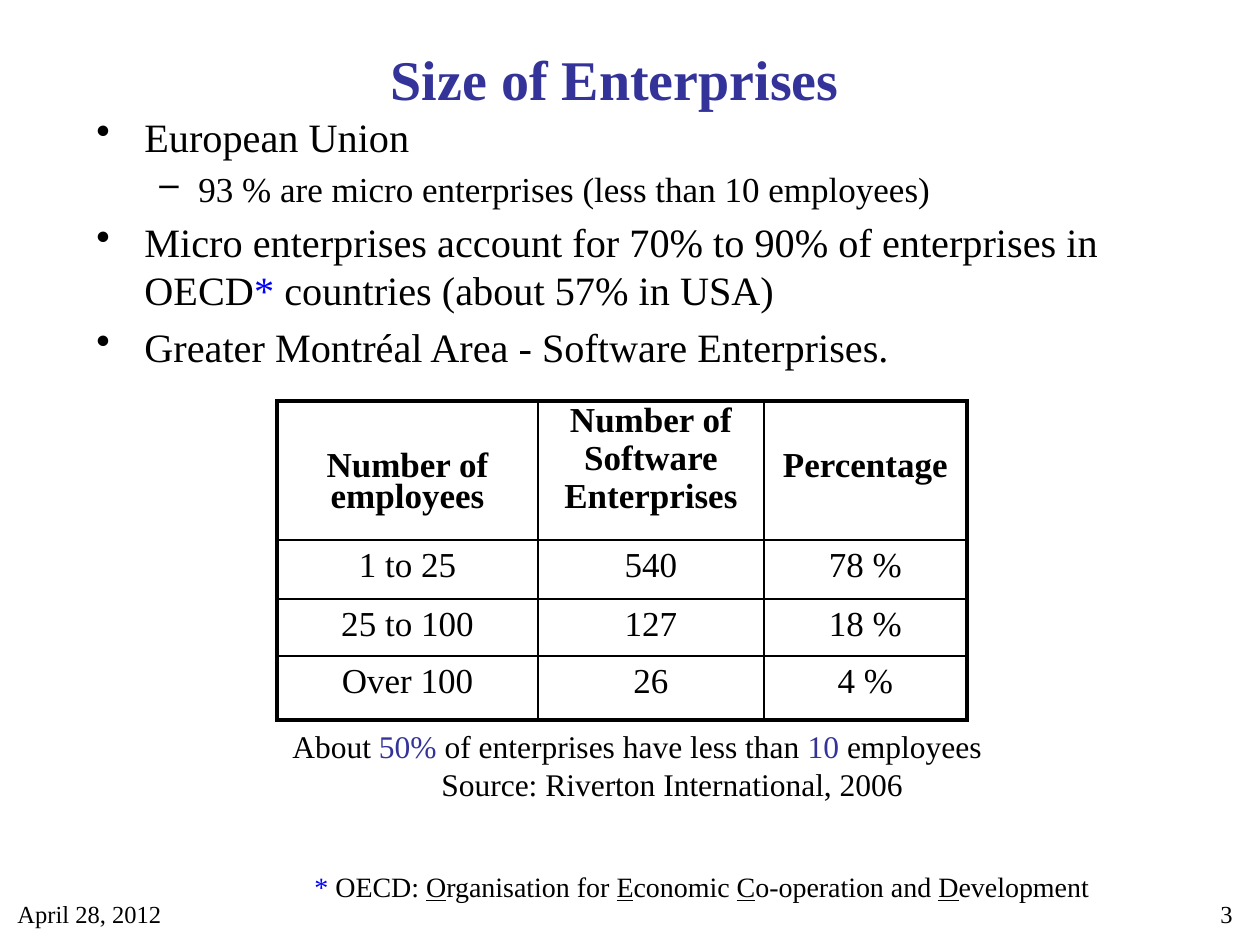
from lxml import etree
from pptx import Presentation
from pptx import util as u
from pptx.dml.color import RGBColor
from pptx.enum import text
from pptx.oxml.ns import qn

FONT = "Times New Roman"
COLORS = {"black": "000000", "indigo": "333399", "blue": "0000FF"}
PX = 914400 / 126  # EMU per pixel


def px(*lengths):
    return [round(length * PX) for length in lengths]


def add_runs(paragraph, runs, size, bold=False):
    """Add (text, colour, underline) runs; colour and underline may be left out."""
    for words, color, underline in ((*run, "black", False)[:3] if len(run) == 1
                                    else (*run, False)[:3] for run in runs):
        run = paragraph.add_run()
        run.text = words
        run.font.name = FONT
        run.font.size = u.Pt(size)
        run.font.bold = bold
        run.font.underline = underline
        run.font.color.rgb = RGBColor.from_string(COLORS[color])


presentation = Presentation()
presentation.slide_width, presentation.slide_height = u.Inches(10), u.Inches(7.5)
slide = presentation.slides.add_slide(presentation.slide_layouts[5])

# Title
title = slide.shapes.title
title.left, title.top, title.width, title.height = px(242, 26, 746, 105)
title.text_frame.vertical_anchor = text.MSO_ANCHOR.MIDDLE
title_paragraph = title.text_frame.paragraphs[0]
title_paragraph.alignment = text.PP_ALIGN.CENTER
add_runs(title_paragraph, [("Size of Enterprises", "indigo")], 32, bold=True)

# Text boxes: box, wrap, then paragraphs as (size, left indent, hanging, bullet, runs)
bullet_level = (23, 48, 48, "•")
dash_level = (20, 102, 39, "–")
text_boxes = [
    ((84, 106, 1091, 318), True, [
        (*bullet_level, [("European Union",)]),
        (*dash_level, [("93 % are micro enterprises (less than 10 employees)",)]),
        (*bullet_level, [
            ("Micro enterprises account for 70% to 90% of enterprises in OECD",),
            ("*", "blue"), (" countries (about 57% in USA)",)]),
        (*bullet_level, [("Greater Montréal Area - Software Enterprises.",)]),
    ]),
    ((280, 721, 722, 89), False, [
        (18, 0, 0, None, [
            ("About",), (" 50%", "indigo"), (" of enterprises have less than ",),
            ("10 ", "indigo"), ("employees",)]),
        (18, 149, 0, None, [("Source: Riverton International, 2006",)]),
    ]),
    ((302, 863, 886, 47), True, [
        (16, 0, 0, None, [
            ("*", "blue"), (" OECD: ",),
            ("O", "black", True), ("rganisation for ",),
            ("E", "black", True), ("conomic ",),
            ("C", "black", True), ("o-operation and ",),
            ("D", "black", True), ("evelopment",)]),
    ]),
    ((5, 893, 294, 66), True, [(14, 0, 0, None, [("April 28, 2012",)])]),
    ((951, 893, 294, 66), True, [(14, 0, 0, None, [("3",)])]),
]
for box, wrap, paragraphs in text_boxes:
    shape = slide.shapes.add_textbox(*px(*box))
    frame = shape.text_frame
    frame.word_wrap = wrap
    for index, (size, indent, hanging, bullet, runs) in enumerate(paragraphs):
        paragraph = frame.paragraphs[0] if index == 0 else frame.add_paragraph()
        add_runs(paragraph, runs, size)
        properties = paragraph._p.get_or_add_pPr()
        properties.set("marL", str(px(indent)[0]))
        properties.set("indent", str(px(-hanging)[0]))
        if bullet:
            paragraph.space_before = u.Pt(size * 0.2)
            etree.SubElement(properties, qn("a:buChar"), char=bullet)

# The page number, added last, sits at the right
paragraph.alignment = text.PP_ALIGN.RIGHT

# Table of software enterprises by size
rows = [
    ["Number of employees", "Number of\nSoftware\nEnterprises", "Percentage"],
    ["1 to 25", "540", "78 %"],
    ["25 to 100", "127", "18 %"],
    ["Over 100", "26", "4 %"],
]
column_widths, row_heights = px(261, 226, 203), px(139, 59, 57, 64)
table = slide.shapes.add_table(
    len(rows), len(column_widths), *px(277, 401),
    sum(column_widths), sum(row_heights)).table
table.first_row = table.horz_banding = False
for column, width in zip(table.columns, column_widths):
    column.width = width
for row, height in zip(table.rows, row_heights):
    row.height = height

last_row, last_column = len(rows) - 1, len(column_widths) - 1
for row_index, row in enumerate(rows):
    is_header = row_index == 0
    for column_index, words in enumerate(row):
        cell = table.cell(row_index, column_index)
        lines = words.split("\n")
        if is_header and len(lines) == 1:
            cell.margin_top = px(52)[0]
        for index, line in enumerate(lines):
            frame = cell.text_frame
            paragraph = frame.paragraphs[0] if index == 0 else frame.add_paragraph()
            paragraph.alignment = text.PP_ALIGN.CENTER
            paragraph.space_before = u.Pt(4)
            if is_header:
                paragraph.line_spacing = 0.8
            add_runs(paragraph, [(line,)], 20, bold=is_header)

        # Thick outer frame, thin inner rules
        properties = cell._tc.get_or_add_tcPr()
        sides = {"a:lnL": column_index == 0, "a:lnR": column_index == last_column,
                 "a:lnT": is_header, "a:lnB": row_index == last_row}
        for tag, is_outer in sides.items():
            border = etree.SubElement(properties, qn(tag),
                                      w=str(u.Pt(2.25 if is_outer else 1)))
            fill = etree.SubElement(border, qn("a:solidFill"))
            etree.SubElement(fill, qn("a:srgbClr"), val=COLORS["black"])
        cell.fill.background()

presentation.save("out.pptx")
